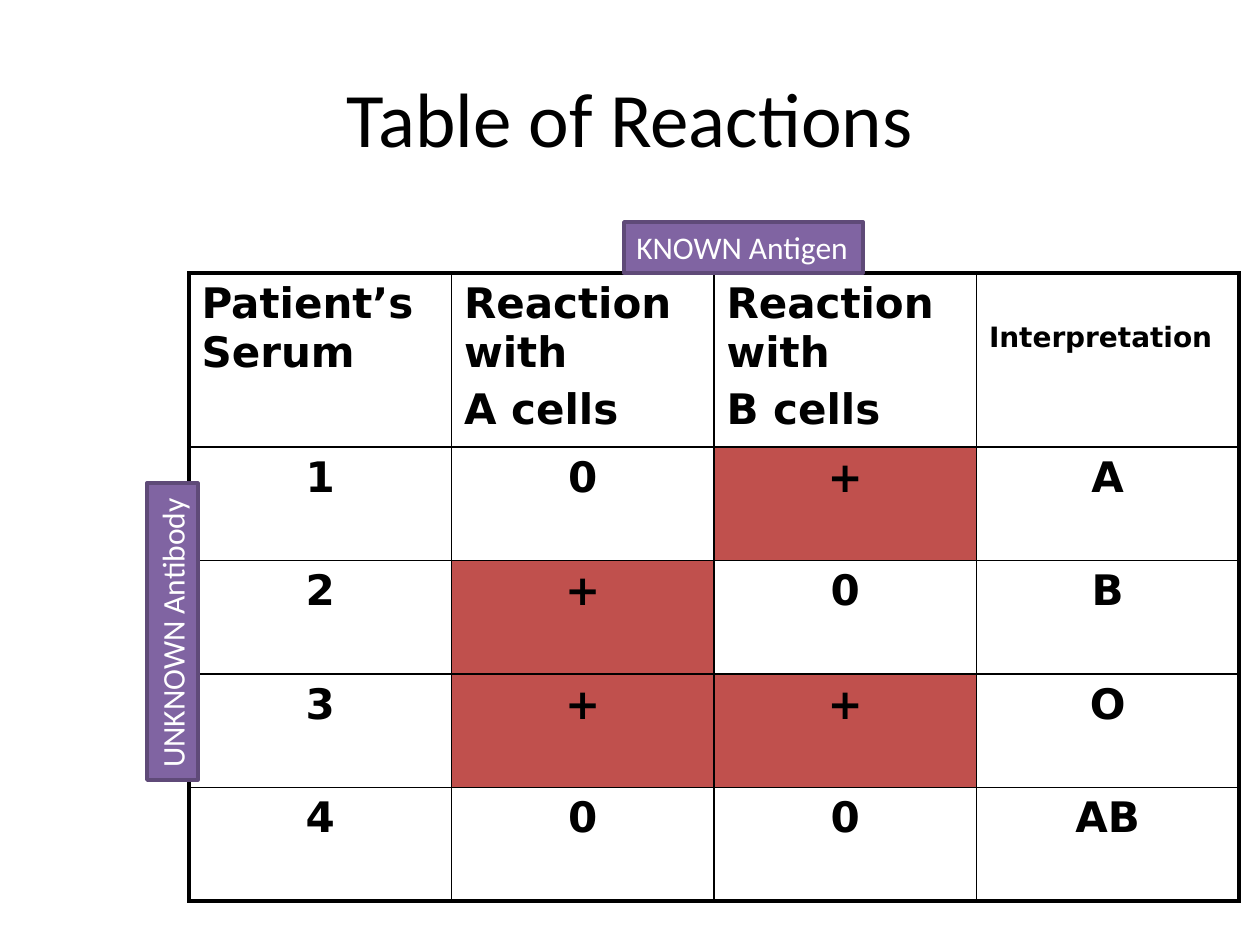
import dataclasses

import pptx
import pptx.dml.color
import pptx.enum.shapes
import pptx.enum.text
import pptx.oxml.ns
import pptx.util
from lxml import etree


@dataclasses.dataclass(frozen=True)
class Theme:
    """Colours, fonts and sizes of the slide."""
    ink: str = "000000"
    paper: str = "FFFFFF"
    hit: str = "C0504D"
    tag: str = "8064A2"
    edge: str = "5F4A78"
    sans: str = "Calibri"
    grid: str = "DejaVu Sans"
    head: int = 44
    body: int = 24
    note: int = 18
    small: int = 16
    thin: float = 1
    thick: float = 2.25


THEME = Theme()
ALIGN = pptx.enum.text.PP_ALIGN
ANCHOR = pptx.enum.text.MSO_ANCHOR
ROWS = [
    ["Patient’s Serum", "Reaction with\nA cells", "Reaction with\nB cells", "Interpretation"],
    ["1", "0", "+", "A"],
    ["2", "+", "0", "B"],
    ["3", "+", "+", "O"],
    ["4", "0", "0", "AB"],
]


def px(num):
    """Turn pixels into EMU."""
    return pptx.util.Emu(round(num * 914400 / 126))


def rgb(code):
    """Turn a hex code into a colour."""
    return pptx.dml.color.RGBColor.from_string(code)


def style(para, face, size, color, bold=False, align=ALIGN.LEFT):
    """Set the font and alignment of a paragraph."""
    para.alignment = align
    font = para.font
    font.name, font.size, font.bold = face, pptx.util.Pt(size), bold
    font.color.rgb = rgb(color)


def add_title(slide, text, box):
    """Add the centred title."""
    frame = slide.shapes.add_textbox(*map(px, box)).text_frame
    frame.word_wrap = True
    frame.vertical_anchor = ANCHOR.MIDDLE
    frame.text = text
    style(frame.paragraphs[0], THEME.sans, THEME.head, THEME.ink, align=ALIGN.CENTER)


def add_tag(slide, text, box, turn=0):
    """Add a purple label, turned if asked."""
    shape = slide.shapes.add_shape(
        pptx.enum.shapes.MSO_SHAPE.RECTANGLE, *map(px, box))
    shape.rotation = turn
    shape.shadow.inherit = False
    shape.fill.solid()
    shape.fill.fore_color.rgb = rgb(THEME.tag)
    shape.line.color.rgb = rgb(THEME.edge)
    shape.line.width = pptx.util.Pt(2)
    frame = shape.text_frame
    frame.word_wrap = False
    frame.auto_size = pptx.enum.text.MSO_AUTO_SIZE.SHAPE_TO_FIT_TEXT
    frame.vertical_anchor = ANCHOR.TOP
    frame.text = text
    style(frame.paragraphs[0], THEME.sans, THEME.note, THEME.paper)


def add_edge(cell, side, width):
    """Draw one border of a cell."""
    qn = pptx.oxml.ns.qn
    line = etree.SubElement(cell._tc.get_or_add_tcPr(), qn(f"a:ln{side}"),
                            w=str(pptx.util.Pt(width)))
    fill = etree.SubElement(line, qn("a:solidFill"))
    etree.SubElement(fill, qn("a:srgbClr"), val=THEME.ink)


def fill_cell(cell, text, top, last):
    """Write, fill and space one cell."""
    cell.text = text
    size = THEME.small if top and last else THEME.body
    if top and last:
        cell.margin_top = px(49)
    for num, para in enumerate(cell.text_frame.paragraphs):
        style(para, THEME.grid, size, THEME.ink, True,
              ALIGN.LEFT if top else ALIGN.CENTER)
        if num:
            para.space_before = pptx.util.Pt(size * 0.2)
    if text == "+":
        cell.fill.solid()
        cell.fill.fore_color.rgb = rgb(THEME.hit)
    else:
        cell.fill.background()


def add_grid(slide, rows, box, first):
    """Add the table with a thick outer frame."""
    high, wide = len(rows), len(rows[0])
    table = slide.shapes.add_table(high, wide, *map(px, box)).table
    table.first_row = table.horz_banding = False
    rest = (box[3] - first) / (high - 1)
    for r, row in enumerate(rows):
        table.rows[r].height = px(rest if r else first)
        for c, text in enumerate(row):
            cell = table.cell(r, c)
            outer = {"L": c == 0, "R": c == wide - 1,
                     "T": r == 0, "B": r == high - 1}
            for side, thick in outer.items():
                add_edge(cell, side, THEME.thick if thick else THEME.thin)
            fill_cell(cell, text, r == 0, c == wide - 1)


def main():
    """Build and save the slide."""
    deck = pptx.Presentation()
    deck.slide_width, deck.slide_height = px(1260), px(945)
    slide = deck.slides.add_slide(deck.slide_layouts[6])
    add_title(slide, "Table of Reactions", (63, 38, 1134, 158))
    add_grid(slide, ROWS, (189, 273, 1050, 628), 174)
    add_tag(slide, "UNKNOWN Antibody", (24, 606, 297, 51), 270)
    add_tag(slide, "KNOWN Antigen", (624, 222, 239, 51))
    deck.save("out.pptx")


if __name__ == "__main__":
    main()
